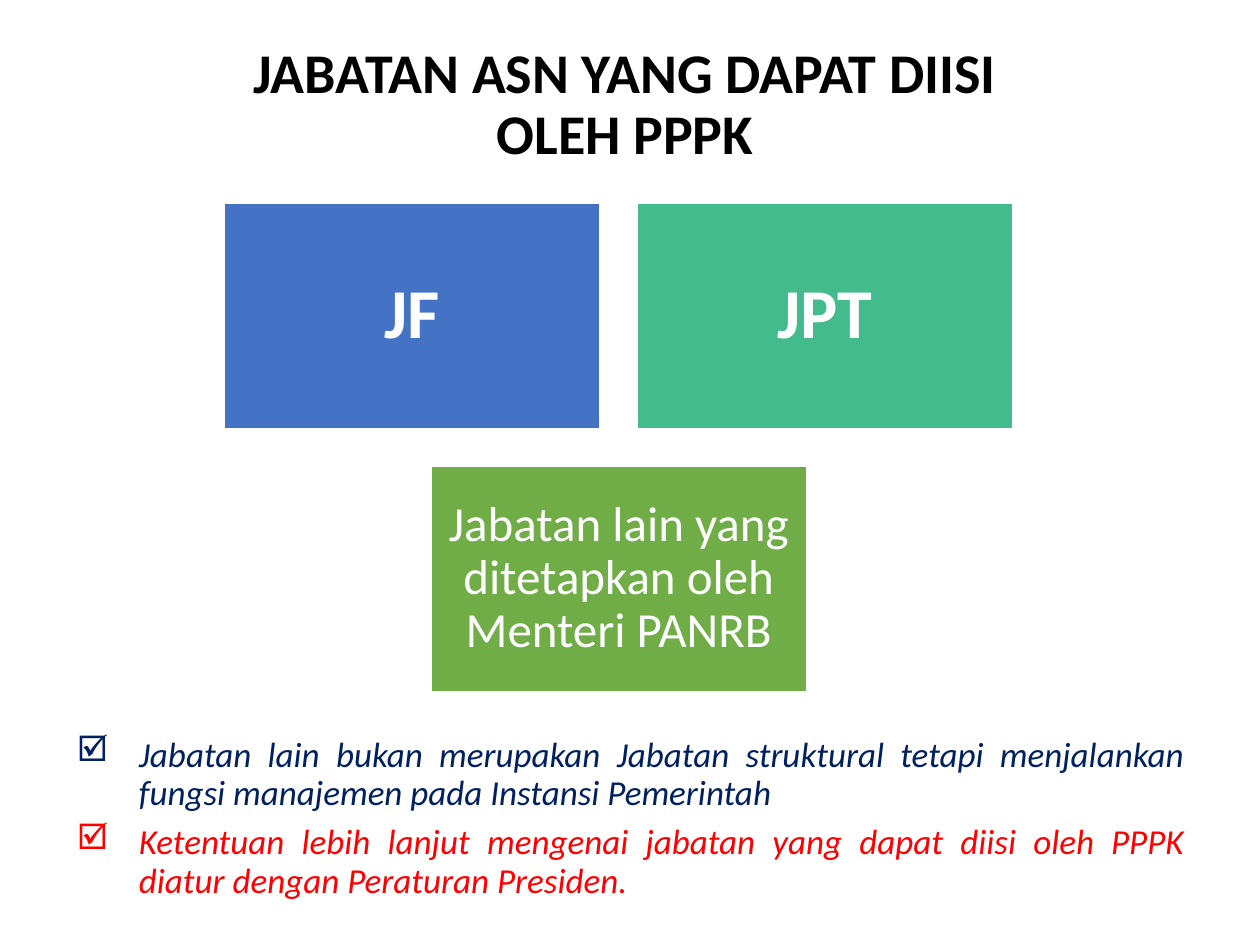
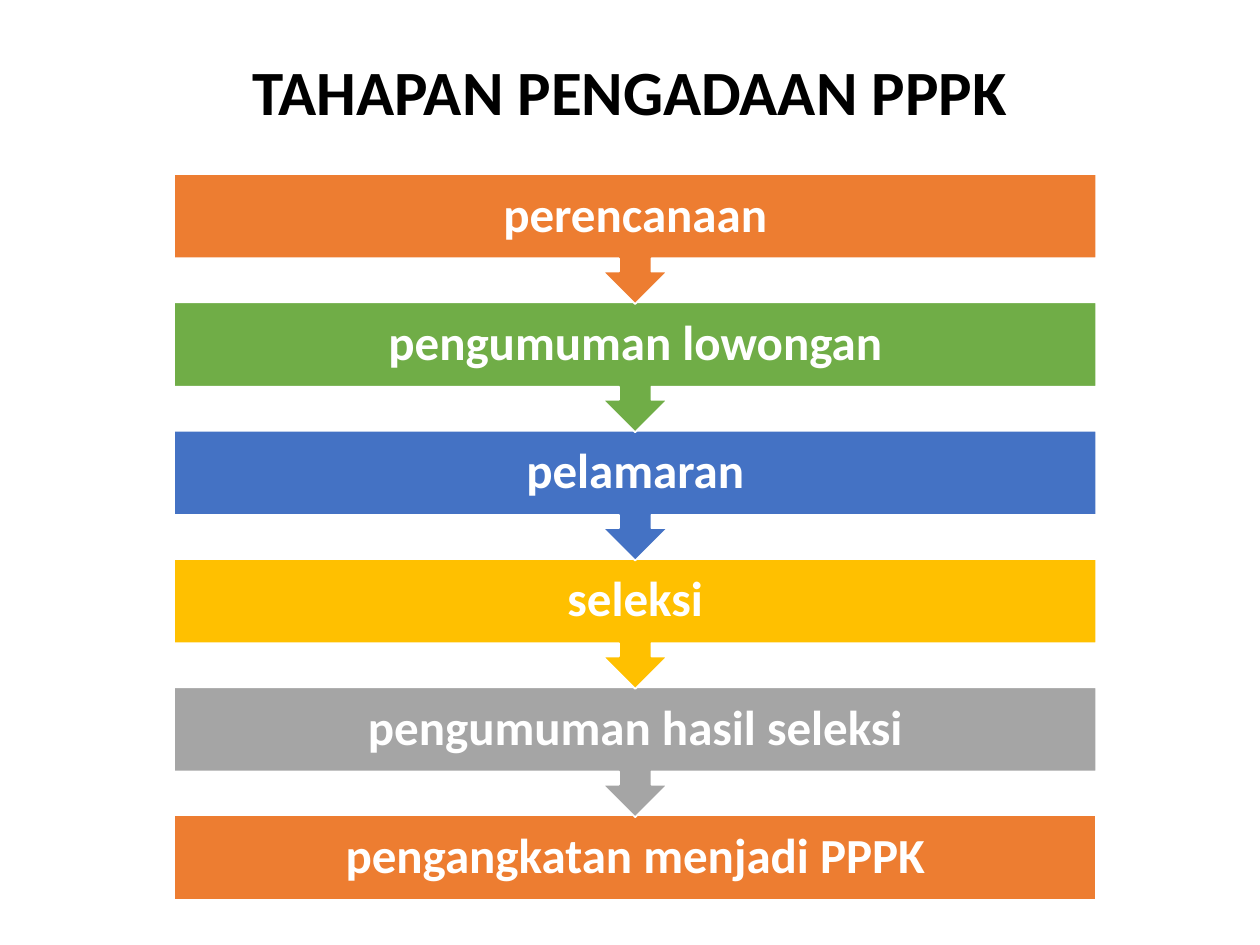
import lxml.etree
import pptx
import pptx.dml.color
import pptx.enum.shapes
import pptx.enum.text
import pptx.oxml.ns
import pptx.util

Cm = pptx.util.Cm
Pt = pptx.util.Pt
ALIGN = pptx.enum.text.PP_ALIGN
SHAPE = pptx.enum.shapes.MSO_SHAPE

FONT = "Calibri"
COLOURS = {
    "black": "000000",
    "white": "FFFFFF",
    "navy": "002060",
    "red": "FF0000",
    "blue": "4472C4",
    "teal": "43BB8D",
    "green": "70AD47",
    "orange": "ED7D31",
    "gold": "FFC000",
    "grey": "A5A5A5",
}

POSITIONS = [
    ("JF", "blue", 40, True),
    ("JPT", "teal", 40, True),
    ("Jabatan lain yang ditetapkan oleh Menteri PANRB", "green", 28, False),
]
NOTES = [
    ("Jabatan lain bukan merupakan Jabatan struktural tetapi menjalankan "
     "fungsi manajemen pada Instansi Pemerintah", "navy"),
    ("Ketentuan lebih lanjut mengenai jabatan yang dapat diisi oleh PPPK "
     "diatur dengan Peraturan Presiden. ", "red"),
]
STAGES = [
    ("perencanaan", "orange"),
    ("pengumuman lowongan", "green"),
    ("pelamaran", "blue"),
    ("seleksi", "gold"),
    ("pengumuman hasil seleksi", "grey"),
    ("pengangkatan menjadi PPPK", "orange"),
]


def rgb(name):
    return pptx.dml.color.RGBColor.from_string(COLOURS[name])


def format_paragraph(paragraph, size, colour, bold=False, italic=False,
                     alignment=ALIGN.CENTER, spacing=0.9):
    paragraph.alignment = alignment
    paragraph.line_spacing = spacing
    for run in paragraph.runs:
        run.font.name = FONT
        run.font.size = Pt(size)
        run.font.bold = bold
        run.font.italic = italic
        run.font.color.rgb = rgb(colour)


def add_title(slide, text, box, size):
    frame = slide.shapes.add_textbox(*map(Cm, box)).text_frame
    frame.word_wrap = True
    frame.vertical_anchor = pptx.enum.text.MSO_ANCHOR.MIDDLE
    frame.text = text
    format_paragraph(frame.paragraphs[0], size, "black", bold=True)


def add_block(slide, kind, box, text, fill, size, bold, inset):
    shape = slide.shapes.add_shape(kind, *map(Cm, box))
    shape.shadow.inherit = False
    shape.fill.solid()
    shape.fill.fore_color.rgb = rgb(fill)
    shape.line.color.rgb = rgb("white")
    shape.line.width = Pt(1)
    frame = shape.text_frame
    frame.word_wrap = True
    frame.vertical_anchor = pptx.enum.text.MSO_ANCHOR.MIDDLE
    frame.margin_left = frame.margin_right = Cm(inset)
    frame.margin_top = frame.margin_bottom = 0
    frame.text = text
    format_paragraph(frame.paragraphs[0], size, "white", bold)
    return shape


def add_position_cards(slide, box):
    left, top, width, height = box
    gap = 0.75
    card_width = (width - gap) / 2
    card_height = (height - gap) / 2
    row_step = card_height + gap
    column_step = card_width + gap
    corners = [(0, 0), (column_step, 0), (column_step / 2, row_step)]
    for (x, y), (text, fill, size, bold) in zip(corners, POSITIONS):
        card = (left + x, top + y, card_width, card_height)
        add_block(slide, SHAPE.RECTANGLE, card, text, fill, size, bold, 0.3)


def add_check_mark(paragraph, indent):
    properties = paragraph._p.get_or_add_pPr()
    properties.set("marL", str(Cm(indent)))
    properties.set("indent", str(-Cm(indent)))
    bullet = lxml.etree.SubElement(properties, pptx.oxml.ns.qn("a:buChar"))
    bullet.set("char", "☑")


def add_notes(slide, box):
    frame = slide.shapes.add_textbox(*map(Cm, box)).text_frame
    frame.word_wrap = True
    frame.text = "\n".join(text for text, colour in NOTES)
    for paragraph, (text, colour) in zip(frame.paragraphs, NOTES):
        format_paragraph(paragraph, 20, colour, italic=True,
                         alignment=ALIGN.JUSTIFY, spacing=Pt(22))
        paragraph.space_before = Pt(6)
        add_check_mark(paragraph, 1.25)


def add_stages(slide, box):
    left, top, width, height = box
    bar_height = 1.7
    callout_height = 2.62
    step = (height - bar_height) / (len(STAGES) - 1)
    last = len(STAGES) - 1
    for index in reversed(range(len(STAGES))):
        text, fill = STAGES[index]
        kind = SHAPE.RECTANGLE if index == last else SHAPE.DOWN_ARROW_CALLOUT
        block_height = bar_height if index == last else callout_height
        stage = (left, top + index * step, width, block_height)
        shape = add_block(slide, kind, stage, text, fill, 28, True, 0.55)
        if index != last:
            shape.adjustments[3] = bar_height / callout_height


def build_positions_slide(slide):
    add_title(slide, "JABATAN ASN YANG DAPAT DIISI \vOLEH PPPK ",
              (1.3, 0.74, 22.86, 2.79), 32)
    add_position_cards(slide, (4.52, 4.09, 15.9, 9.85))
    add_notes(slide, (1.3, 14.71, 22.83, 3.61))


def build_stages_slide(slide):
    add_title(slide, "TAHAPAN PENGADAAN PPPK", (1.27, 0.33, 22.86, 3.18), 36)
    add_stages(slide, (3.51, 3.51, 18.59, 14.63))


def main():
    presentation = pptx.Presentation()
    presentation.slide_width = Cm(25.4)
    presentation.slide_height = Cm(19.05)
    blank = presentation.slide_layouts[6]
    for build in (build_positions_slide, build_stages_slide):
        build(presentation.slides.add_slide(blank))
    presentation.save("out.pptx")


if __name__ == "__main__":
    main()
